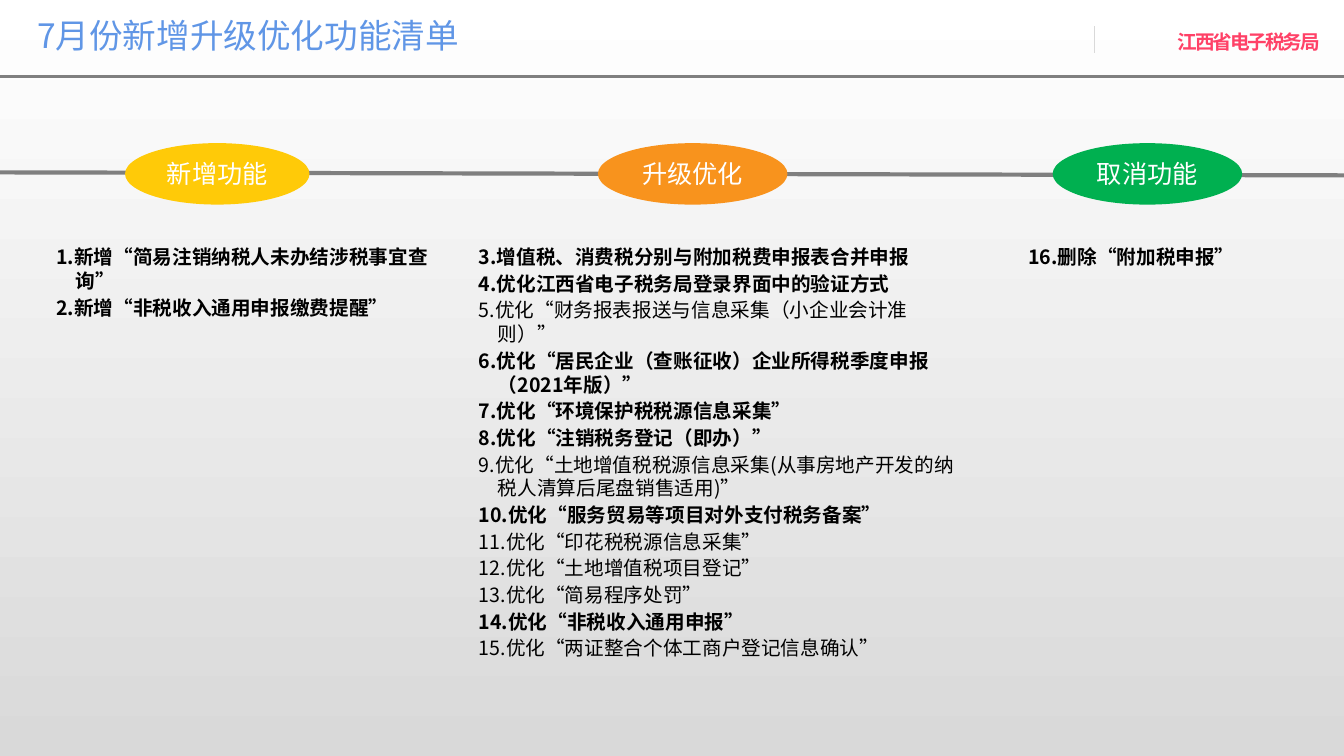
from dataclasses import dataclass

import pptx
import pptx.dml.color
import pptx.enum.dml
import pptx.enum.shapes
import pptx.enum.text
import pptx.oxml.ns
import pptx.shapes.autoshape
import pptx.slide
import pptx.util
from lxml import etree

Inches = pptx.util.Inches
Pt = pptx.util.Pt
RGBColor = pptx.dml.color.RGBColor
Shapes = pptx.enum.shapes.MSO_SHAPE
Anchor = pptx.enum.text.MSO_ANCHOR
Align = pptx.enum.text.PP_ALIGN
qn = pptx.oxml.ns.qn

WHITE = RGBColor(0xFF, 0xFF, 0xFF)
BLACK = RGBColor(0, 0, 0)
LIGHT_GRAY = RGBColor(0xD9, 0xD9, 0xD9)
RULE_GRAY = RGBColor(0x80, 0x80, 0x80)
AXIS_GRAY = RGBColor(0x7F, 0x7F, 0x7F)
TITLE_BLUE = RGBColor(0x60, 0x96, 0xE6)
BUREAU_RED = RGBColor(0xFF, 0x41, 0x67)
YELLOW = RGBColor(0xFF, 0xCA, 0x08)
ORANGE = RGBColor(0xF8, 0x93, 0x1D)
GREEN = RGBColor(0x00, 0xB0, 0x50)

CJK_FONT = "Noto Sans CJK SC"
HANGING = 0.19


@dataclass(frozen=True)
class TextStyle:
    size: float
    color: RGBColor
    font: str = CJK_FONT
    bold: bool = False
    line: float | None = None
    tracking: int = 0


@dataclass(frozen=True)
class Rule:
    start: tuple[float, float]
    end: tuple[float, float]
    color: RGBColor
    width: float


@dataclass(frozen=True)
class Feature:
    text: str
    bold: bool = True


@dataclass(frozen=True)
class Column:
    heading: str
    color: RGBColor
    oval_left: float
    oval_width: float
    list_left: float
    list_width: float
    list_height: float
    hanging: float
    features: list[Feature]


TITLE = TextStyle(24, TITLE_BLUE)
BUREAU = TextStyle(14, BUREAU_RED, "Montserrat", True, 17, -150)
HEADING = TextStyle(18, WHITE, "Arial")
STRONG = TextStyle(14, BLACK, bold=True, line=17)
PLAIN = TextStyle(14, BLACK, line=17)

RULES = [
    Rule((0, 0.76), (13.33, 0.76), RULE_GRAY, 2),
    Rule((10.85, 0.26), (10.85, 0.53), LIGHT_GRAY, 0.5),
    Rule((-0.05, 1.71), (13.33, 1.74), AXIS_GRAY, 3),
]

COLUMNS = [
    Column("新增功能", YELLOW, 1.24, 1.83, 0.46, 3.97, 2.89, HANGING, [
        Feature("新增“简易注销纳税人未办结涉税事宜查询”"),
        Feature("新增“非税收入通用申报缴费提醒”"),
    ]),
    Column("升级优化", ORANGE, 5.93, 1.88, 4.65, 5.01, 4.12, HANGING, [
        Feature("增值税、消费税分别与附加税费申报表合并申报"),
        Feature("优化江西省电子税务局登录界面中的验证方式"),
        Feature("优化“财务报表报送与信息采集（小企业会计准则）”", False),
        Feature("优化“居民企业（查账征收）企业所得税季度申报（2021年版）”"),
        Feature("优化“环境保护税税源信息采集”"),
        Feature("优化“注销税务登记（即办）”"),
        Feature("优化“土地增值税税源信息采集(从事房地产开发的纳税人清算后尾盘销售适用)”", False),
        Feature("优化“服务贸易等项目对外支付税务备案”"),
        Feature("优化“印花税税源信息采集”", False),
        Feature("优化“土地增值税项目登记”", False),
        Feature("优化“简易程序处罚”", False),
        Feature("优化“非税收入通用申报”"),
        Feature("优化“两证整合个体工商户登记信息确认”", False),
    ]),
    Column("取消功能", GREEN, 10.44, 1.88, 10.1, 2.75, 0.34, 0, [
        Feature("删除“附加税申报”"),
    ]),
]


def write(paragraph, text: str, style: TextStyle) -> None:
    span = paragraph.add_run()
    span.text = text
    font = paragraph.font
    font.size = Pt(style.size)
    font.name = style.font
    font.bold = style.bold
    font.color.rgb = style.color
    if style.line:
        paragraph.line_spacing = Pt(style.line)
    properties = span.font._element
    if style.tracking:
        properties.set("spc", str(style.tracking))
    etree.SubElement(properties, qn("a:ea")).set("typeface", CJK_FONT)


def set_margins(frame, horizontal: float, vertical: float) -> None:
    frame.margin_left = frame.margin_right = Inches(horizontal)
    frame.margin_top = frame.margin_bottom = Inches(vertical)
    frame.word_wrap = True


def add_rule(page: pptx.slide.Slide, rule: Rule) -> None:
    ends = [Inches(value) for value in (*rule.start, *rule.end)]
    connector = page.shapes.add_connector(pptx.enum.shapes.MSO_CONNECTOR.STRAIGHT, *ends)
    connector.line.color.rgb = rule.color
    connector.line.width = Pt(rule.width)
    etree.SubElement(connector._element.spPr, qn("a:effectLst"))


def add_label(page: pptx.slide.Slide, kind: Shapes, place: tuple[float, ...], text: str,
              style: TextStyle, align: Align, margin: float) -> pptx.shapes.autoshape.Shape:
    shape = page.shapes.add_shape(kind, *map(Inches, place))
    shape.shadow.inherit = False
    shape.fill.background()
    shape.line.fill.background()
    frame = shape.text_frame
    set_margins(frame, margin, margin)
    frame.vertical_anchor = Anchor.MIDDLE
    frame.paragraphs[0].alignment = align
    write(frame.paragraphs[0], text, style)
    return shape


def add_column(page: pptx.slide.Slide, column: Column, first_number: int) -> None:
    oval = add_label(page, Shapes.OVAL, (column.oval_left, 1.42, column.oval_width, 0.61),
                     column.heading, HEADING, Align.CENTER, 0)
    oval.fill.solid()
    oval.fill.fore_color.rgb = column.color
    place = (column.list_left, 2.38, column.list_width, column.list_height)
    frame = page.shapes.add_textbox(*map(Inches, place)).text_frame
    set_margins(frame, 0.1, 0.05)
    for index, feature in enumerate(column.features):
        para = frame.add_paragraph() if index else frame.paragraphs[0]
        if column.hanging:
            indents = para._p.get_or_add_pPr()
            indents.set("marL", str(Inches(column.hanging)))
            indents.set("indent", str(-Inches(column.hanging)))
        para.space_after = Pt(2)
        write(para, f"{first_number + index}.{feature.text}", STRONG if feature.bold else PLAIN)


def main() -> None:
    deck = pptx.Presentation()
    deck.slide_width = Inches(13.33)
    deck.slide_height = Inches(7.5)
    page = deck.slides.add_slide(deck.slide_layouts[6])

    backdrop = page.background.fill
    backdrop.gradient()
    backdrop.gradient_angle = 270
    for stop, color, position in zip(backdrop.gradient_stops, (WHITE, LIGHT_GRAY), (0, 1)):
        stop.color.rgb = color
        stop.position = position

    bureau = page.shapes.add_textbox(*map(Inches, (11.55, 0.22, 2.19, 0.37))).text_frame
    set_margins(bureau, 0.13, 0.07)
    write(bureau.paragraphs[0], "江西省电子税务局", BUREAU)
    for rule in RULES:
        add_rule(page, rule)
    add_label(page, Shapes.ROUNDED_RECTANGLE, (0.29, 0.07, 5.41, 0.56),
              "7月份新增升级优化功能清单", TITLE, Align.LEFT, 0.05)

    number = 1
    for column in COLUMNS:
        add_column(page, column, number)
        number += len(column.features)
    deck.save("out.pptx")


if __name__ == "__main__":
    main()
